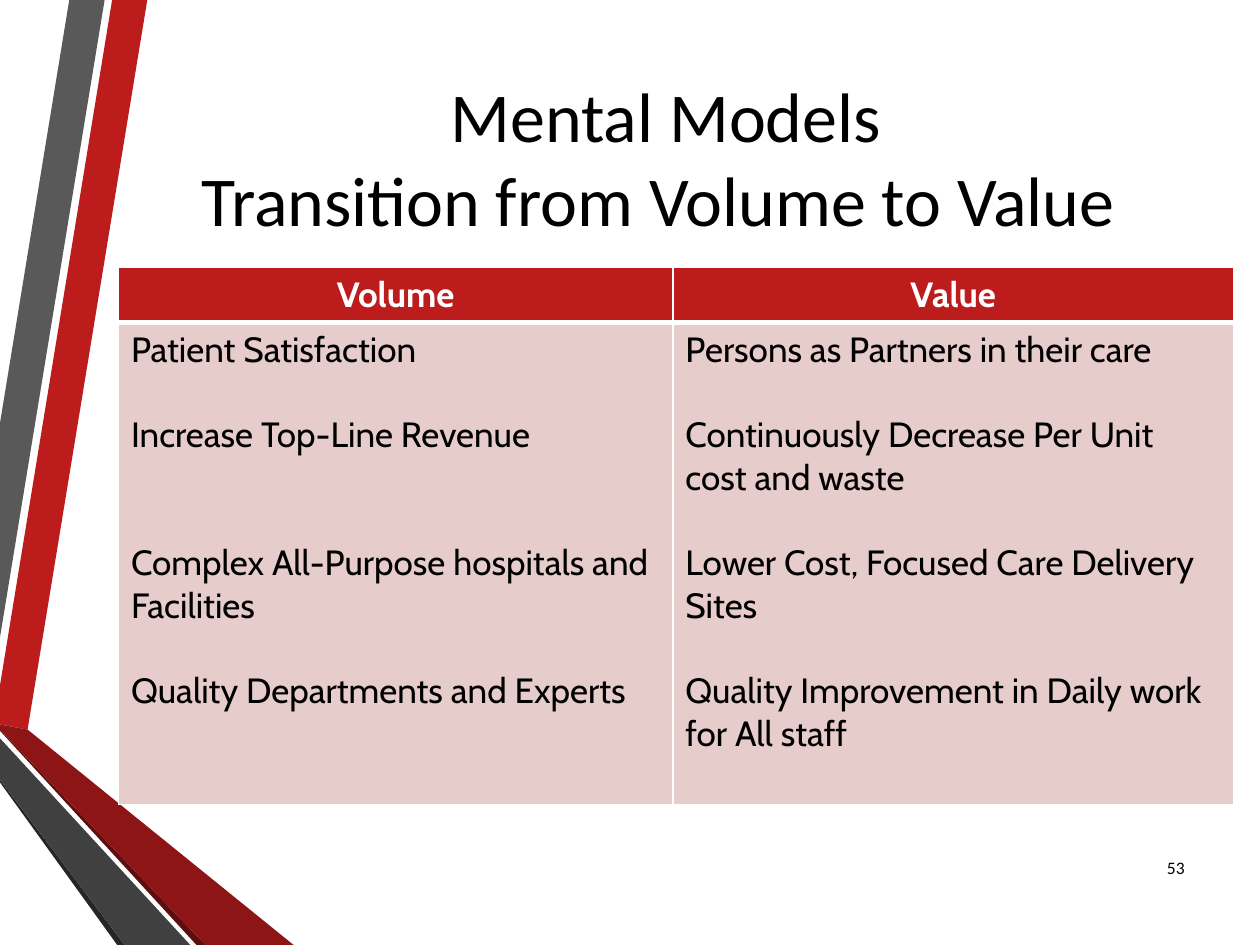
import pptx
import pptx.dml.color
import pptx.enum.text
import pptx.oxml
import pptx.oxml.ns
import pptx.util

Pt = pptx.util.Pt
ALIGN = pptx.enum.text.PP_ALIGN
ANCHOR = pptx.enum.text.MSO_ANCHOR
COLORS = {
    "red": "BC1C1C", "dark red": "8D1515", "deep red": "5E0E0E",
    "gray": "595959", "dark gray": "404040", "deep gray": "262626",
    "pink": "E7CCCC", "white": "FFFFFF", "black": "000000",
}
LINE = 24.4


def rgb(name):
    return pptx.dml.color.RGBColor.from_string(COLORS[name])


def write(paragraph, text, font="Cabin", size=20, color="black", bold=False,
          align=ALIGN.LEFT, before=0):
    paragraph.text = text
    paragraph.alignment = align
    paragraph.space_before = Pt(before)
    for run in paragraph.runs:
        run.font.name = font
        run.font.size = Pt(size)
        run.font.bold = bold
        run.font.color.rgb = rgb(color)


presentation = pptx.Presentation()
presentation.slide_width, presentation.slide_height = Pt(720), Pt(540)
slide = presentation.slides.add_slide(presentation.slide_layouts[5])

ribbons = [
    ("red", [(0, 391.7), (0, 414), (15.8, 416.9), (84.2, 0), (64.1, 0)]),
    ("gray", [(59.8, 0), (39.6, 0), (0, 241.9), (0, 364.3)]),
    ("deep gray", [(0, 445.7), (0, 447.1), (67, 540), (71.3, 540)]),
    ("deep red", [(0, 416.9), (0, 417.6), (112.3, 540), (117.4, 540)]),
    ("dark red", [(0, 416.9), (117.4, 540), (167.8, 540), (15.8, 416.9), (0, 414)]),
    ("dark gray", [(0, 445.7), (71.3, 540), (108.7, 540), (0, 421.9)]),
]
for color, corners in ribbons:
    points = [(Pt(x), Pt(y)) for x, y in corners]
    builder = slide.shapes.build_freeform(*points[0])
    builder.add_line_segments(points[1:], close=True)
    ribbon = builder.convert_to_shape()
    ribbon.shadow.inherit = False
    ribbon.fill.solid()
    ribbon.fill.fore_color.rgb = rgb(color)
    ribbon.line.fill.background()

title = slide.shapes.title
title.left, title.top, title.width, title.height = Pt(77), Pt(36), Pt(607), Pt(156)
title.text_frame.auto_size = pptx.enum.text.MSO_AUTO_SIZE.NONE
title.text_frame.vertical_anchor = ANCHOR.MIDDLE
title.text_frame.margin_bottom = Pt(52.4)
write(title.text_frame.paragraphs[0], "Mental Models\vTransition from Volume to Value ",
      font="Calibri", size=40, align=ALIGN.CENTER)

columns = [
    ("Volume", 316.8, [
        ("Patient Satisfaction", 0),
        ("Increase Top-Line Revenue", 1),
        ("Complex All-Purpose hospitals and Facilities", 2),
        ("Quality Departments and Experts", 1),
    ]),
    ("Value", 320.4, [
        ("Persons as Partners in their care", 0),
        ("Continuously Decrease Per Unit cost and waste", 1),
        ("Lower Cost, Focused Care Delivery Sites", 1),
        ("Quality Improvement in Daily work for All staff", 1),
    ]),
]
table = slide.shapes.add_table(2, 2, Pt(67.7), Pt(152.6), Pt(637.2), Pt(307)).table
table.rows[0].height, table.rows[1].height = Pt(31.5), Pt(275.5)
for index, (heading, width, items) in enumerate(columns):
    table.columns[index].width = Pt(width)
    write(table.cell(0, index).text_frame.paragraphs[0], heading,
          color="white", bold=True, align=ALIGN.CENTER)
    body = table.cell(1, index).text_frame
    for number, (item, gap) in enumerate(items):
        paragraph = body.add_paragraph() if number else body.paragraphs[0]
        write(paragraph, item, before=gap * LINE)

    for row, color, thick_side in [(0, "red", "B"), (1, "pink", "T")]:
        cell = table.cell(row, index)
        properties = cell._tc.get_or_add_tcPr()
        for side in "LRTB":
            width = Pt(3 if side == thick_side else 1)
            properties.append(pptx.oxml.parse_xml(
                f'<a:ln{side} {pptx.oxml.ns.nsdecls("a")} w="{width}"><a:solidFill>'
                f'<a:srgbClr val="{COLORS["white"]}"/></a:solidFill></a:ln{side}>'))
        cell.fill.solid()
        cell.fill.fore_color.rgb = rgb(color)

page_number = slide.shapes.add_textbox(Pt(650), Pt(481), Pt(34), Pt(29))
page_number.text_frame.word_wrap = True
page_number.text_frame.vertical_anchor = ANCHOR.MIDDLE
write(page_number.text_frame.paragraphs[0], "53", font="Calibri", size=10, align=ALIGN.RIGHT)

presentation.save("out.pptx")
